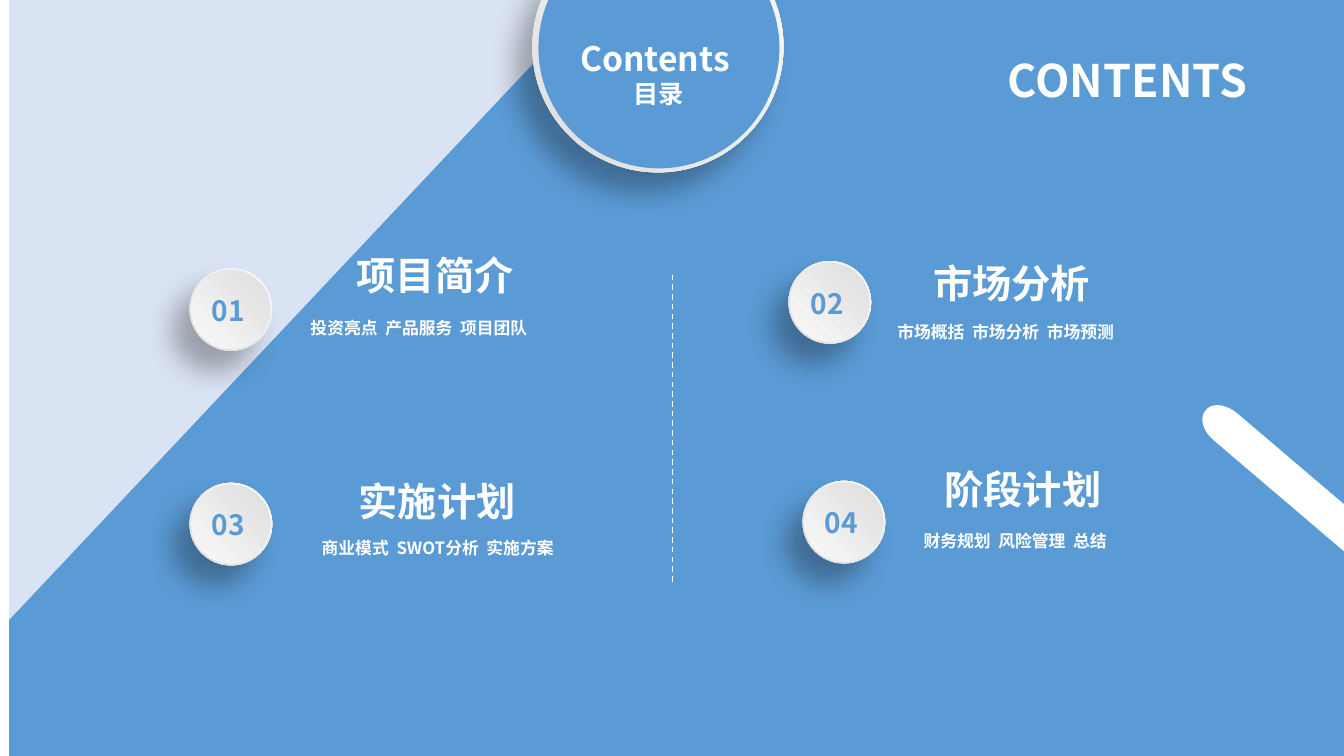
import dataclasses
import typing

import lxml.etree
import pptx
import pptx.dml.color
import pptx.enum.dml
import pptx.enum.shapes
import pptx.enum.text
import pptx.oxml.ns
import pptx.util

Inches = pptx.util.Inches
Pt = pptx.util.Pt
Preset = pptx.enum.shapes.MSO_SHAPE
Align = pptx.enum.text.PP_ALIGN
Point = tuple[float, float]


@dataclasses.dataclass(frozen=True)
class Theme:
    font: str = "Noto Sans CJK SC"
    blue: str = "5B9BD5"
    pale: str = "DAE3F3"
    white: str = "FFFFFF"
    ring: tuple[str, str] = ("FFFFFF", "D9D9D9")
    face: tuple[str, str] = ("D9D9D9", "FEFEFE")
    headline: int = 32
    title: int = 28
    label: int = 24
    number: int = 20
    sublabel: int = 18
    topics: int = 12


@dataclasses.dataclass(frozen=True)
class Box:
    left: float
    top: float
    width: float
    height: float

    def lengths(self) -> list[pptx.util.Length]:
        return [Inches(side) for side in dataclasses.astuple(self)]


@dataclasses.dataclass(frozen=True)
class Section:
    number: str
    title: str
    topics: str
    badge: Point
    title_box: Box
    topics_box: Box


THEME = Theme()
TILT = 29.5

SECTIONS = [
    Section("01", "项目简介", "投资亮点  产品服务  项目团队", (1.88, 2.66),
            Box(3.44, 2.44, 4.57, 0.57), Box(3.08, 3.11, 3.04, 0.22)),
    Section("02", "市场分析", "市场概括  市场分析  市场预测", (7.82, 2.59),
            Box(9.16, 2.52, 4.57, 0.57), Box(8.9, 3.15, 3.04, 0.22)),
    Section("03", "实施计划", "商业模式  SWOT分析  实施方案", (1.88, 4.79),
            Box(3.46, 4.69, 4.88, 0.57), Box(3.19, 5.29, 2.71, 0.22)),
    Section("04", "阶段计划", "财务规划  风险管理  总结", (7.96, 4.77),
            Box(9.27, 4.57, 5.29, 0.57), Box(9.16, 5.23, 2.71, 0.22)),
]


def rgb(color: str) -> pptx.dml.color.RGBColor:
    return pptx.dml.color.RGBColor.from_string(color)


def add_element(parent: typing.Any, tag: str, **attributes: object) -> typing.Any:
    values = {name: str(value) for name, value in attributes.items()}
    return lxml.etree.SubElement(parent, pptx.oxml.ns.qn(tag), values)


def style_solid(shape: typing.Any, color: str) -> None:
    shape.shadow.inherit = False
    shape.fill.solid()
    shape.fill.fore_color.rgb = rgb(color)
    shape.line.fill.background()


def add_solid(shapes: typing.Any, preset: Preset, box: Box, color: str,
              rotation: float = 0) -> typing.Any:
    shape = shapes.add_shape(preset, *box.lengths())
    shape.rotation = rotation
    style_solid(shape, color)
    return shape


def add_disc(shapes: typing.Any, box: Box, colors: tuple[str, str],
             shadow: bool = False) -> None:
    """Ellipse with a radial gradient centred on its top right corner."""
    disc = add_solid(shapes, Preset.OVAL, box, colors[0], TILT)
    properties = disc.element.spPr
    gradient = add_element(properties, "a:gradFill", rotWithShape=1)
    stops = add_element(gradient, "a:gsLst")
    for position, color in zip((0, 100000), colors):
        stop = add_element(stops, "a:gs", pos=position)
        add_element(stop, "a:srgbClr", val=color)
    radial = add_element(gradient, "a:path", path="circle")
    add_element(radial, "a:fillToRect", l=100000, b=100000)
    properties.replace(properties.find(pptx.oxml.ns.qn("a:solidFill")), gradient)
    if shadow:
        effects = properties.find(pptx.oxml.ns.qn("a:effectLst"))
        outer = add_element(effects, "a:outerShdw", blurRad=Pt(20), dist=Pt(19),
                            dir=130 * 60000, algn="tr", rotWithShape=0)
        tone = add_element(outer, "a:srgbClr", val="000000")
        add_element(tone, "a:alpha", val=30000)


def add_text(shapes: typing.Any, box: Box, lines: list[tuple[str, int]],
             color: str = THEME.white, align: Align = Align.LEFT,
             wrap: bool = True) -> typing.Any:
    frame = shapes.add_textbox(*box.lengths()).text_frame
    frame.word_wrap = wrap
    frame.auto_size = pptx.enum.text.MSO_AUTO_SIZE.SHAPE_TO_FIT_TEXT
    for index, (words, size) in enumerate(lines):
        para = frame.add_paragraph() if index else frame.paragraphs[0]
        para.alignment = align
        span = para.add_run()
        span.text = words
        span.font.size = Pt(size)
        span.font.bold = True
        span.font.color.rgb = rgb(color)
        span.font.name = THEME.font
        add_element(span.font._element, "a:ea", typeface=THEME.font)
    return frame


def add_heading(shapes: typing.Any, section: Section) -> None:
    group = shapes.add_group_shape().shapes
    add_text(group, section.title_box, [(section.title, THEME.title)])
    frame = add_text(group, section.topics_box, [(section.topics, THEME.topics)])
    frame.margin_left = frame.margin_right = 0
    frame.margin_top = frame.margin_bottom = 0
    para = frame.paragraphs[0]
    para.line_spacing = 1.2
    para.space_before = Pt(0.2 * THEME.topics)


def add_badge(shapes: typing.Any, section: Section) -> None:
    left, top = section.badge
    group = shapes.add_group_shape().shapes
    add_disc(group, Box(left, top, 0.82, 0.82), THEME.ring, shadow=True)
    add_disc(group, Box(left + 0.02, top + 0.02, 0.78, 0.78), THEME.face)
    add_text(group, Box(left + 0.12, top + 0.2, 0.58, 0.44),
             [(section.number, THEME.number)], THEME.blue)


def curve(start: Point, pull: Point, push: Point, end: Point) -> list[Point]:
    """Points along a cubic curve, without its start."""
    steps = 10
    points = []
    for step in range(1, steps + 1):
        t = step / steps
        weights = ((1 - t) ** 3, 3 * t * (1 - t) ** 2, 3 * t * t * (1 - t), t ** 3)
        x, y = (sum(w * value for w, value in zip(weights, axis))
                for axis in zip(start, pull, push, end))
        points.append((x, y))
    return points


def add_bar(shapes: typing.Any) -> None:
    """Diagonal white bar with a rounded tip."""
    lower, tip, upper = (12.04, 4.37), (11.96, 4.07), (12.27, 4.1)
    outline = [lower, *curve(lower, (11.93, 4.28), (11.89, 4.14), tip),
               *curve(tip, (12.02, 3.99), (12.16, 4.01), upper), (16.64, 7.82)]
    builder = shapes.build_freeform(Inches(16.64), Inches(8.29))
    builder.add_line_segments([(Inches(x), Inches(y)) for x, y in outline])
    style_solid(builder.convert_to_shape(), THEME.white)


def add_divider(shapes: typing.Any) -> None:
    divider = shapes.add_connector(pptx.enum.shapes.MSO_CONNECTOR.STRAIGHT,
                                   Inches(6.67), Inches(5.77), Inches(6.67), Inches(2.7))
    divider.line.color.rgb = rgb(THEME.white)
    divider.line.width = Pt(1)
    divider.line.dash_style = pptx.enum.dml.MSO_LINE.DASH
    add_element(divider.element.spPr, "a:effectLst")


def main() -> None:
    deck = pptx.Presentation()
    deck.slide_width, deck.slide_height = Inches(13.33), Inches(7.5)
    page = deck.slides.add_slide(deck.slide_layouts[6])
    shapes = page.shapes

    # Backdrop and headline
    add_solid(shapes, Preset.RECTANGLE, Box(0.09, -0.02, 13.33, 7.53), THEME.blue)
    add_solid(shapes, Preset.RIGHT_TRIANGLE, Box(-0.09, 0.16, 6.17, 5.81), THEME.pale, 90)
    add_text(shapes, Box(8.97, 0.47, 3.5, 0.64), [("CONTENTS", THEME.headline)],
             align=Align.RIGHT)
    add_bar(shapes)

    # Section headings
    for section in SECTIONS:
        add_heading(shapes, section)

    # Round label at the top
    medal = shapes.add_group_shape().shapes
    add_disc(medal, Box(5.28, -0.78, 2.49, 2.49), THEME.ring, shadow=True)
    add_solid(medal, Preset.OVAL, Box(5.34, -0.72, 2.39, 2.39), THEME.blue, TILT)
    add_text(shapes, Box(5.62, 0.33, 1.83, 0.81),
             [("Contents ", THEME.label), ("目录", THEME.sublabel)],
             align=Align.CENTER, wrap=False)

    # Divider and numbered badges
    add_divider(shapes)
    for section in SECTIONS:
        add_badge(shapes, section)

    deck.save("out.pptx")


if __name__ == "__main__":
    main()
